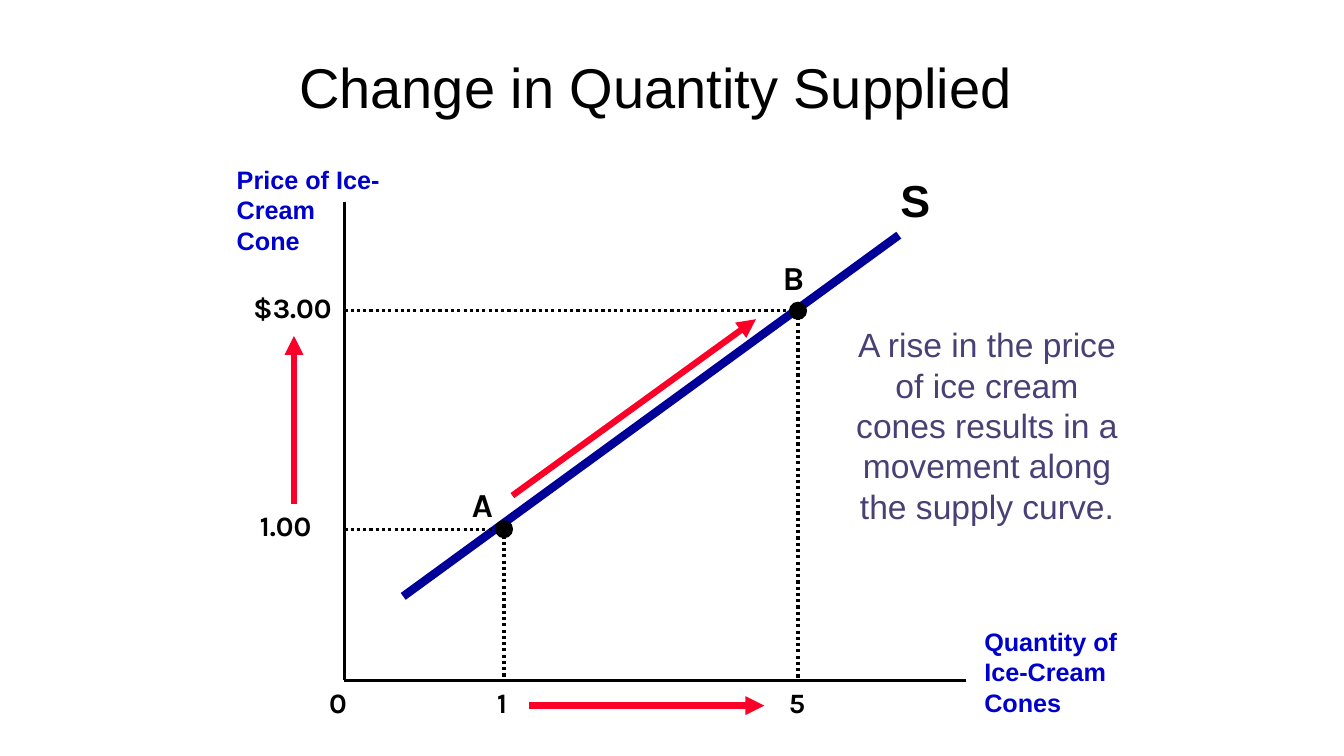
from dataclasses import dataclass
from typing import Optional

from lxml import etree
from pptx import Presentation
from pptx import util as u
from pptx.dml.color import RGBColor
from pptx.enum import dml, shapes, text
from pptx.oxml.ns import qn

PX = 9525  # EMU per px, 96 px to the inch
COLORS = {
    "black": "000000",
    "white": "FFFFFF",
    "axis_title": "0000CC",
    "supply": "000099",
    "arrow": "FC0128",
    "note": "494076",
}

# Plot geometry in px
AXIS_X, AXIS_Y = 328, 648
POINT_A, POINT_B = (480, 504), (760, 296)
DOT = 16


@dataclass
class Line:
    start: tuple[int, int]
    end: tuple[int, int]
    color: str = "black"
    width: float = 2.25
    dotted: bool = False
    arrow: bool = False


@dataclass
class Label:
    words: str
    box: tuple[int, int, int, int]
    size: int = 20
    font: str = "Karla"
    color: str = "black"
    bold: bool = True
    align: Optional[text.PP_ALIGN] = None


AXES = [
    Line((AXIS_X, 192), (AXIS_X, AXIS_Y)),
    Line((AXIS_X, AXIS_Y), (920, AXIS_Y)),
]
SUPPLY = Line((384, 568), (856, 224), "supply", 6)
GUIDES = [
    Line(*ends, dotted=True)
    for x, y in (POINT_A, POINT_B)
    for ends in (((AXIS_X, y), (x, y)), ((x, y), (x, AXIS_Y)))
]
ARROWS = [
    Line(start, end, "arrow", 4.5, arrow=True)
    for start, end in (
        ((280, 480), (280, 320)),
        ((504, 672), (728, 672)),
        ((488, 472), (720, 304)),
    )
]
TITLE = Label("Change in Quantity Supplied", (248, 45, 752, 74), 40, "Arial",
              bold=False, align=text.PP_ALIGN.CENTER)
NOTE = Label(
    "A rise in the price of ice cream cones results in a movement along the supply curve.",
    (800, 304, 280, 204), 24, "Arial", "note", False, text.PP_ALIGN.CENTER)
LABELS = [
    Label("0", (304, AXIS_Y, 48, 41)),
    Label("1", (464, AXIS_Y, 48, 41)),
    Label("5", (742, AXIS_Y, 56, 41)),
    Label("1.00", (238, 480, 96, 41)),
    Label("$3.00", (232, 272, 96, 41)),
    Label("A", (440, 456, 40, 48), 24),
    Label("B", (736, 240, 40, 48), 24),
    Label("S", (848, 160, 64, 60), 32, "Arial"),
    Label("Price of Ice-Cream Cone", (216, 152, 160, 96), 18, "Arial", "axis_title"),
    Label("Quantity of Ice-Cream Cones", (928, 592, 160, 96), 18, "Arial", "axis_title"),
]


def rgb(name: str) -> RGBColor:
    return RGBColor.from_string(COLORS[name])


def emu(*lengths: int) -> list[int]:
    return [length * PX for length in lengths]


def draw_line(s, line: Line) -> None:
    c = s.shapes.add_connector(shapes.MSO_CONNECTOR.STRAIGHT, *emu(*line.start, *line.end))
    c.line.color.rgb = rgb(line.color)
    c.line.width = u.Pt(line.width)
    if line.dotted:
        c.line.dash_style = dml.MSO_LINE.ROUND_DOT
    if line.arrow:
        etree.SubElement(c.line._get_or_add_ln(), qn("a:tailEnd"), type="triangle")
    etree.SubElement(c._element.spPr, qn("a:effectLst"))


def write(sp, label: Label) -> None:
    tf = sp.text_frame
    frame_format = {
        "word_wrap": True,
        "auto_size": text.MSO_AUTO_SIZE.NONE,
        "vertical_anchor": text.MSO_ANCHOR.TOP,
    }
    for name, value in frame_format.items():
        setattr(tf, name, value)
    p = tf.paragraphs[0]
    p.alignment = label.align
    r = p.add_run()
    r.text = label.words
    font_format = {"name": label.font, "size": u.Pt(label.size), "bold": label.bold}
    for name, value in font_format.items():
        setattr(r.font, name, value)
    r.font.color.rgb = rgb(label.color)


def draw_title(s, label: Label) -> None:
    sp = s.shapes.title
    for name, value in zip(("left", "top", "width", "height"), emu(*label.box)):
        setattr(sp, name, value)
    write(sp, label)


def draw_label(s, label: Label) -> None:
    write(s.shapes.add_textbox(*emu(*label.box)), label)


def draw_note(s, label: Label) -> None:
    sp = s.shapes.add_shape(shapes.MSO_SHAPE.RECTANGLE, *emu(*label.box))
    sp.shadow.inherit = False
    sp.fill.solid()
    sp.fill.fore_color.rgb = rgb("white")
    sp.line.fill.background()
    write(sp, label)


def draw_dot(s, center: tuple[int, int]) -> None:
    left, top = (v - DOT // 2 for v in center)
    sp = s.shapes.add_shape(shapes.MSO_SHAPE.OVAL, *emu(left, top, DOT, DOT))
    sp.shadow.inherit = False
    sp.fill.solid()
    sp.fill.fore_color.rgb = rgb("black")
    sp.line.color.rgb = rgb("black")
    sp.line.width = u.Pt(1)


def main() -> None:
    prs = Presentation()
    prs.slide_width, prs.slide_height = emu(1280, 720)
    s = prs.slides.add_slide(prs.slide_layouts[5])

    # Title
    draw_title(s, TITLE)

    # Axes, supply curve, guides and movement arrows
    for line in [*AXES, SUPPLY, *GUIDES, *ARROWS]:
        draw_line(s, line)

    # Wording
    draw_note(s, NOTE)
    for label in LABELS:
        draw_label(s, label)

    # Points on the curve
    for center in (POINT_A, POINT_B):
        draw_dot(s, center)

    prs.save("out.pptx")


if __name__ == "__main__":
    main()
